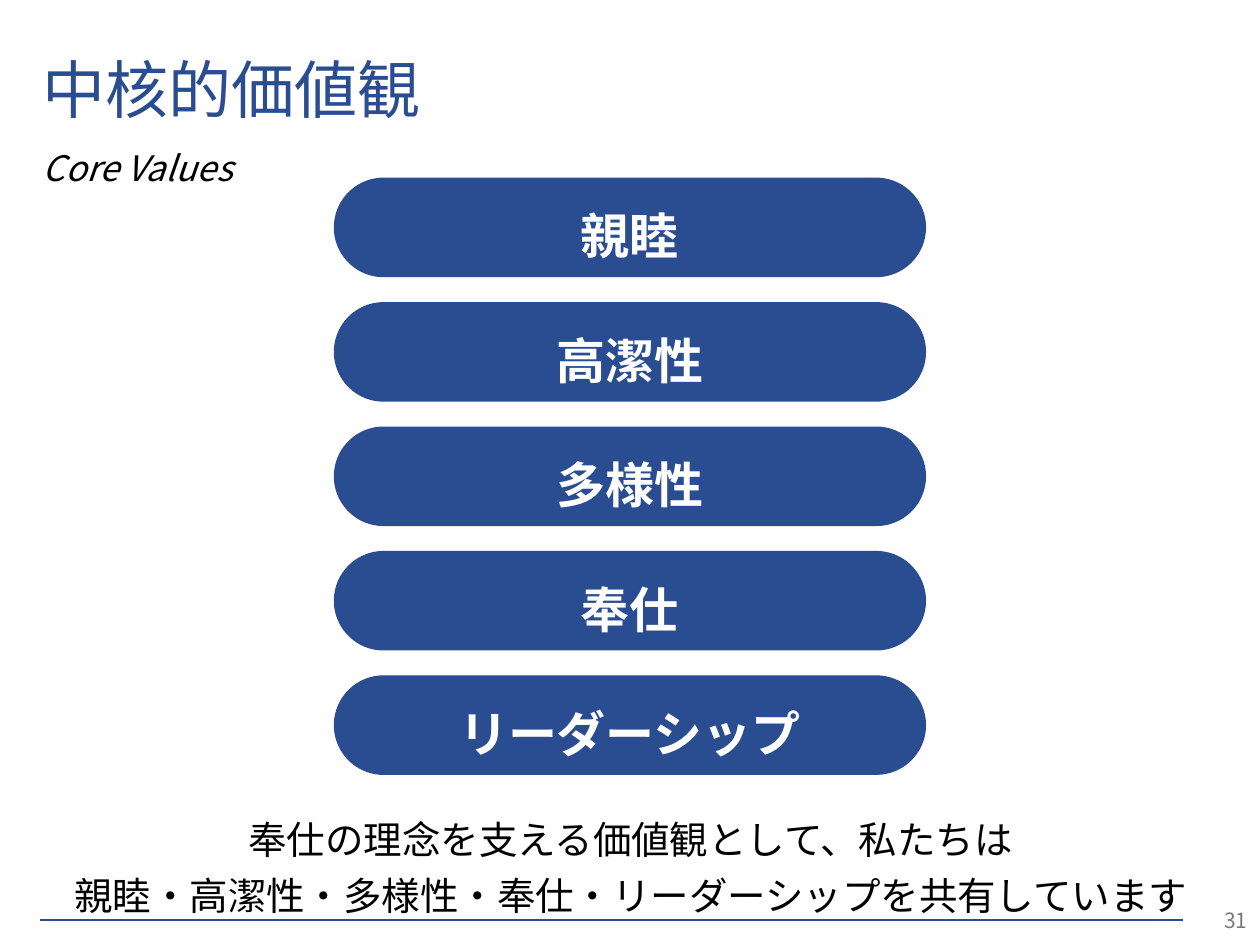
from dataclasses import dataclass

import pptx
import pptx.dml.color
import pptx.enum.shapes
import pptx.enum.text
import pptx.oxml
import pptx.oxml.ns
import pptx.util
from pptx.dml.color import RGBColor
from pptx.enum.shapes import MSO_CONNECTOR, MSO_SHAPE
from pptx.enum.text import MSO_ANCHOR, PP_ALIGN
from pptx.util import Inches

BLUE = RGBColor(0x2A, 0x4D, 0x92)
GRAY = RGBColor(0x79, 0x79, 0x79)
BLACK = RGBColor(0, 0, 0)
WHITE = RGBColor(255, 255, 255)
FONT = "Noto Sans CJK JP"

VALUES = ["親睦", "高潔性", "多様性", "奉仕", "リーダーシップ"]
FIRST_TOP, LAST_TOP = 1.41, 5.36


@dataclass(frozen=True)
class Area:
    left: float
    top: float
    width: float
    height: float

    def lengths(self) -> list[int]:
        return [Inches(n) for n in (self.left, self.top, self.width, self.height)]


@dataclass(frozen=True)
class Style:
    size: float
    color: RGBColor
    bold: bool = False
    italic: bool = False
    align: PP_ALIGN = PP_ALIGN.LEFT
    anchor: MSO_ANCHOR = MSO_ANCHOR.MIDDLE
    line_spacing: float = 1.0
    space_after: float = 0
    wrap: bool = True


TITLE = Style(36, BLUE, line_spacing=0.9)
SUBTITLE = Style(20, BLACK, italic=True, anchor=MSO_ANCHOR.TOP,
                 line_spacing=1.2, space_after=12, wrap=False)
SUMMARY = Style(22, BLACK, align=PP_ALIGN.CENTER, line_spacing=1.2,
                space_after=12, wrap=False)
PILL = Style(28, WHITE, bold=True, align=PP_ALIGN.CENTER, line_spacing=1.2)
NUMBER = Style(12, GRAY, align=PP_ALIGN.RIGHT)


def write(shape, lines: list[str], style: Style) -> None:
    """Fill a shape with one paragraph, broken into the given lines."""
    frame = shape.text_frame
    frame.word_wrap = style.wrap
    frame.vertical_anchor = style.anchor
    para = frame.paragraphs[0]
    para.alignment = style.align
    para.line_spacing = style.line_spacing
    para.space_after = pptx.util.Pt(style.space_after)
    for index, line in enumerate(lines):
        if index:
            para.add_line_break()
        span = para.add_run()
        span.text = line
        font = span.font
        font.name = FONT
        font.size = pptx.util.Pt(style.size)
        font.bold = style.bold
        font.italic = style.italic
        font.color.rgb = style.color
        east_asian = pptx.oxml.parse_xml(
            f'<a:ea {pptx.oxml.ns.nsdecls("a")} typeface="{FONT}"/>')
        font._element.find(pptx.oxml.ns.qn("a:latin")).addnext(east_asian)


def add_text(page, area: Area, lines: list[str], style: Style) -> None:
    write(page.shapes.add_textbox(*area.lengths()), lines, style)


def add_filled(page, kind: MSO_SHAPE, area: Area, fill: RGBColor,
               text: str, style: Style):
    shape = page.shapes.add_shape(kind, *area.lengths())
    shape.shadow.inherit = False
    shape.fill.solid()
    shape.fill.fore_color.rgb = fill
    shape.line.fill.background()
    write(shape, [text], style)
    return shape


def add_pill(page, top: float, text: str) -> None:
    pill = add_filled(page, MSO_SHAPE.ROUNDED_RECTANGLE,
                      Area(2.65, top, 4.7, 0.79), BLUE, text, PILL)
    pill.adjustments[0] = 0.5
    pill.text_frame.margin_top = Inches(0.08)


def add_footer_rule(page) -> None:
    rule = page.shapes.add_connector(
        MSO_CONNECTOR.STRAIGHT, Inches(9.39), Inches(7.3), Inches(0.32), Inches(7.3))
    rule.line.color.rgb = BLUE
    rule.line.width = pptx.util.Pt(1)
    rule._element.spPr.append(
        pptx.oxml.parse_xml(f'<a:effectLst {pptx.oxml.ns.nsdecls("a")}/>'))


def main() -> None:
    deck = pptx.Presentation()
    deck.slide_width, deck.slide_height = Inches(10), Inches(7.5)
    page = deck.slides.add_slide(deck.slide_layouts[6])

    add_footer_rule(page)
    add_text(page, Area(0.24, 0.44, 9.72, 0.6), ["中核的価値観"], TITLE)
    add_filled(page, MSO_SHAPE.RECTANGLE, Area(9.39, 7.1, 0.61, 0.4),
               WHITE, "31", NUMBER)
    add_text(page, Area(0.24, 1.05, 1.81, 0.49), ["Core Values"], SUBTITLE)
    add_text(page, Area(0.43, 6.36, 9.15, 0.97),
             ["奉仕の理念を支える価値観として、私たちは",
              "親睦・高潔性・多様性・奉仕・リーダーシップを共有しています"], SUMMARY)

    pitch = (LAST_TOP - FIRST_TOP) / (len(VALUES) - 1)
    for index, value in enumerate(VALUES):
        add_pill(page, FIRST_TOP + index * pitch, value)

    deck.save("out.pptx")


if __name__ == "__main__":
    main()
